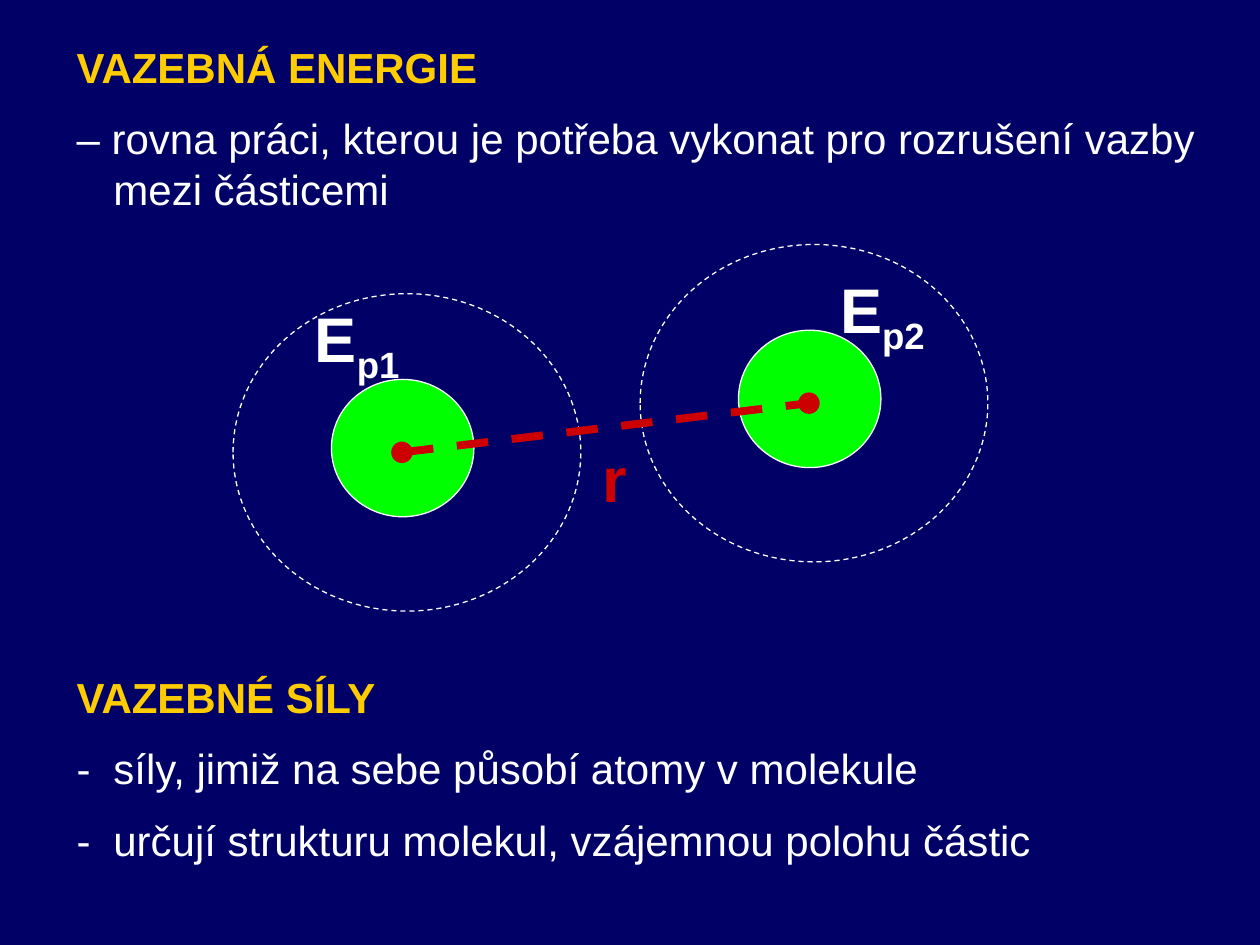
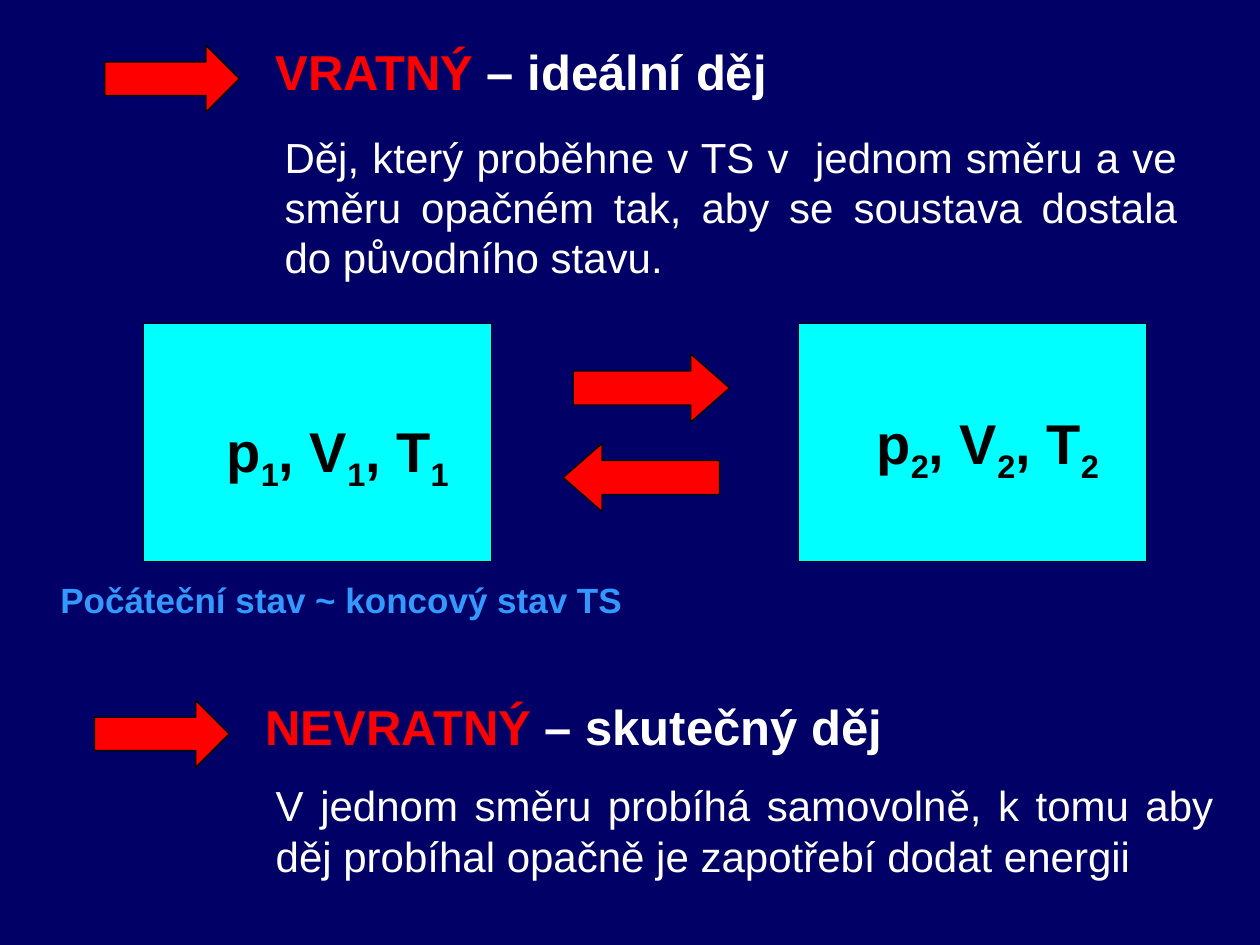
from lxml.etree import SubElement
from pptx import Presentation
from pptx.dml.color import RGBColor
from pptx.enum.dml import MSO_LINE
from pptx.enum.shapes import MSO_CONNECTOR, MSO_SHAPE
from pptx.enum.text import MSO_ANCHOR, PP_ALIGN
from pptx.oxml.ns import qn
from pptx.util import Pt

NAVY, WHITE, BLACK = "000066", "FFFFFF", "000000"
GOLD, GREEN, CRIMSON = "FFCC00", "00FF00", "CC0000"
RED, CYAN, SKY = "FF0000", "00FFFF", "3399FF"
color = RGBColor.from_string


def add_text(page, place, paragraphs, size, align=PP_ALIGN.LEFT, hanging=0):
    """Each paragraph is a list of (text, colour, bold, subscript) spans."""
    box = page.shapes.add_textbox(*map(Pt, place))
    frame = box.text_frame
    frame.word_wrap = True
    for index, spans in enumerate(paragraphs):
        para = frame.paragraphs[0] if index == 0 else frame.add_paragraph()
        para.alignment = align
        para.space_before = Pt(size / 2 if index else 0)
        if hanging:
            properties = para._p.get_or_add_pPr()
            properties.set("marL", str(Pt(hanging)))
            properties.set("indent", str(-Pt(hanging)))
        for text, fill, bold, subscript in spans:
            span = para.add_run()
            span.text = text
            span.font.name = "Arial"
            span.font.size = Pt(size)
            span.font.bold = bold
            span.font.color.rgb = color(fill)
            if subscript:
                span._r.get_or_add_rPr().set("baseline", "-25000")
    return box


def add_figure(page, kind, place, fill, line):
    figure = page.shapes.add_shape(kind, *map(Pt, place))
    figure.shadow.inherit = False
    if fill:
        figure.fill.solid()
        figure.fill.fore_color.rgb = color(fill)
    else:
        figure.fill.background()
    figure.line.color.rgb = color(line)
    figure.line.width = Pt(0.75)
    return figure


deck = Presentation()
deck.slide_width, deck.slide_height = Pt(720), Pt(540)
pages = [deck.slides.add_slide(deck.slide_layouts[6]) for _ in range(2)]
for page in pages:
    page.background.fill.solid()
    page.background.fill.fore_color.rgb = color(NAVY)
energy_page, process_page = pages

# Definitions of bond energy and bond forces
definitions = [
    ((36.7, 20.2, 683.3, 108), "VAZEBNÁ ENERGIE",
     ["– rovna práci, kterou je potřeba vykonat pro rozrušení vazby mezi částicemi"]),
    ((36.7, 380.2, 668.9, 122.4), "VAZEBNÉ SÍLY",
     ["-\tsíly, jimiž na sebe působí atomy v molekule",
      "-\turčují strukturu molekul, vzájemnou polohu částic"]),
]
for place, heading, lines in definitions:
    paragraphs = [[(heading, GOLD, True, False)]]
    paragraphs += [[(line, WHITE, False, False)] for line in lines]
    add_text(energy_page, place, paragraphs, 24, hanging=21)

# Two atoms: dashed orbit, nucleus and energy label
atoms = [(133.2, 167.8, 172.8, 167.8, "p1"), (365.8, 139.7, 473, 151.2, "p2")]
centers = []
for left, top, label_left, label_top, index in atoms:
    orbit = add_figure(energy_page, MSO_SHAPE.OVAL, (left, top, 198.7, 181.4), None, WHITE)
    orbit.line.dash_style = MSO_LINE.DASH
    add_figure(energy_page, MSO_SHAPE.OVAL, (left + 56.2, top + 49, 81.4, 78.5), GREEN, WHITE)
    add_text(energy_page, (label_left, label_top, 118.8, 50.4),
             [[("E", WHITE, True, False), (index, WHITE, True, True)]], 36)
    centers.append((left + 96.5, top + 90.7))

# Distance between the nuclei
for x, y in centers:
    add_figure(energy_page, MSO_SHAPE.OVAL, (x - 5.75, y - 5.75, 11.5, 11.5), CRIMSON, CRIMSON)
distance = energy_page.shapes.add_connector(
    MSO_CONNECTOR.STRAIGHT, *map(Pt, centers[0] + centers[1]))
distance.line.color.rgb = color(CRIMSON)
distance.line.width = Pt(4.5)
distance.line.dash_style = MSO_LINE.DASH
SubElement(distance._element.spPr, qn("a:effectLst"))
add_text(energy_page, (337, 247.7, 118.8, 50.4), [[("r", CRIMSON, True, False)]], 36)

# Reversible and irreversible process: arrow, heading and description
processes = [
    (59.8, 25.9, "VRATNÝ", " – ideální děj", (155.5, 71.3, 524.2, 93.6),
     "Děj, který proběhne v TS v  jednom směru a ve směru opačném tak, "
     "aby se soustava dostala do původního stavu."),
    (54, 400.3, "NEVRATNÝ", " – skutečný děj", (150.5, 442.1, 550.1, 64.8),
     "V jednom směru probíhá samovolně, k tomu aby děj probíhal opačně "
     "je zapotřebí dodat energii"),
]
for left, top, name, meaning, place, description in processes:
    arrow = add_figure(process_page, MSO_SHAPE.RIGHT_ARROW, (left, top, 77, 38.2), RED, BLACK)
    arrow.adjustments[1] = 0.5
    add_text(process_page, (left + 90.7, top - 5.7, 416.9, 41),
             [[(name, RED, True, False), (meaning, WHITE, True, False)]], 28)
    body = add_text(process_page, place, [[(description, WHITE, False, False)]], 24,
                    PP_ALIGN.JUSTIFY)
    body.text_frame.vertical_anchor = MSO_ANCHOR.MIDDLE

# Initial and final state
states = [(82.1, 122.4, 234.7, "1"), (456.5, 493.9, 229.7, "2")]
for left, label_left, label_top, number in states:
    add_figure(process_page, MSO_SHAPE.RECTANGLE, (left, 185, 198.7, 136.1), CYAN, BLACK)
    spans = []
    for quantity in ("p", ", V", ", T"):
        spans += [(quantity, BLACK, True, False), (number, BLACK, True, True)]
    add_text(process_page, (label_left, label_top, 146.9, 45.4), [spans], 32)

# Arrows there and back
for left, top, rotation in [(327.6, 202.3, 0), (321.8, 253.4, 180)]:
    arrow = add_figure(process_page, MSO_SHAPE.RIGHT_ARROW, (left, top, 89.3, 38.9), RED, BLACK)
    arrow.adjustments[1] = 0.57
    arrow.rotation = rotation

# Caption under the states
add_text(process_page, (19.4, 326.9, 351.4, 31),
         [[("Počáteční stav ~ koncový stav TS", SKY, True, False)]], 20, PP_ALIGN.CENTER)

deck.save("out.pptx")
